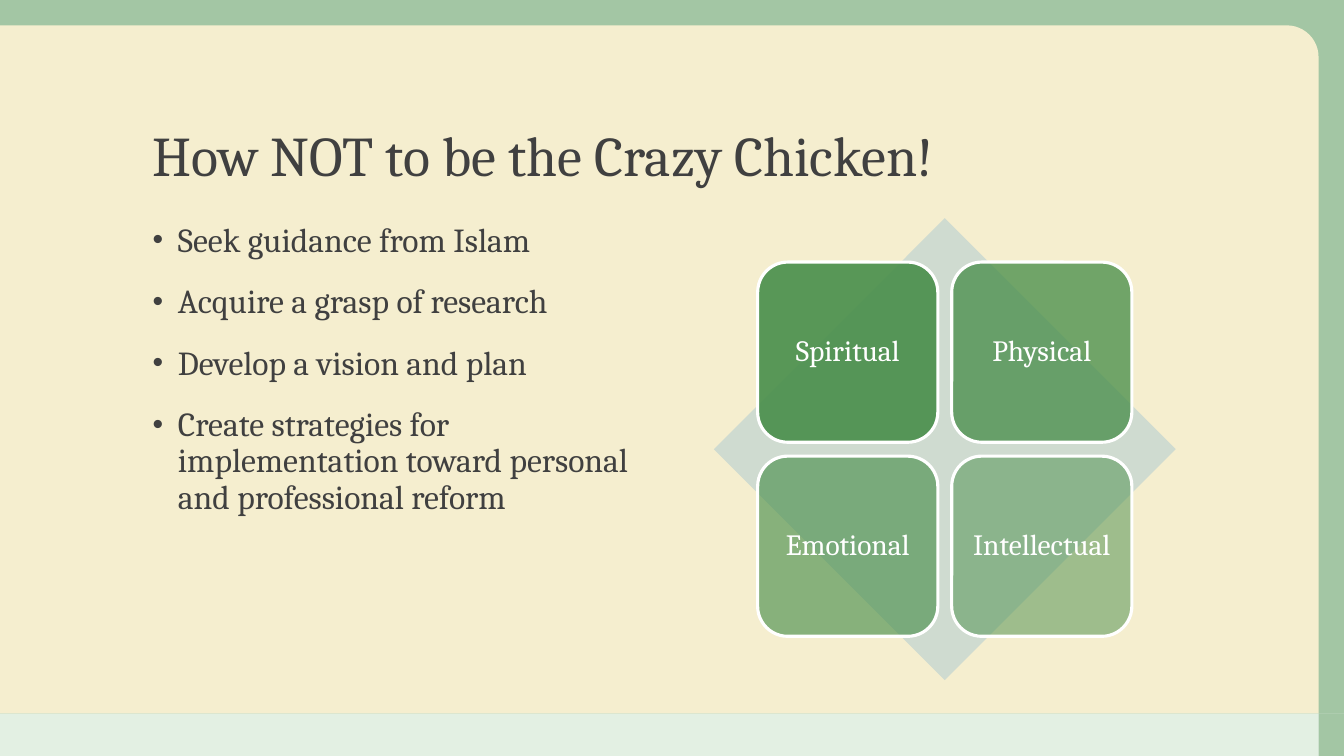
from dataclasses import dataclass

from lxml.etree import SubElement
from pptx import Presentation
from pptx.dml.color import RGBColor
from pptx.enum.shapes import MSO_SHAPE as Preset
from pptx.enum.text import MSO_ANCHOR as Anchor, PP_ALIGN as Align
from pptx.oxml.ns import qn
from pptx.util import Cm, Pt

SLIDE_WIDTH, SLIDE_HEIGHT = 33.87, 19.05


@dataclass(frozen=True)
class Theme:
    font: str = "Cambria"
    text: str = "404040"
    white: str = "FFFFFF"
    green: str = "488E4A"
    cream: str = "F5EECF"
    mint: str = "D8EBD8"
    diamond: str = "CFDBD0"
    title_size: float = 40
    body_size: float = 24
    tile_size: float = 21
    tile_line: float = 2.25


def write(frame, lines, *, font, size, color, align=Align.LEFT, anchor=Anchor.TOP,
          gap=0, bullet=None, inset=None):
    """Fill a text frame, one paragraph a line; gap is the space between them in points."""
    frame.word_wrap = True
    frame.vertical_anchor = anchor
    if inset is not None:
        frame.margin_left = frame.margin_right = Cm(inset)
        frame.margin_top = frame.margin_bottom = Cm(inset)
    for index, line in enumerate(lines):
        paragraph = frame.add_paragraph() if index else frame.paragraphs[0]
        if bullet:
            properties = paragraph._p.get_or_add_pPr()
            properties.set("marL", str(Cm(0.635)))
            properties.set("indent", str(Cm(-0.635)))
            SubElement(properties, qn("a:buSzPct"), val="90000")
            SubElement(properties, qn("a:buFont"), typeface="Arial")
            SubElement(properties, qn("a:buChar"), char=bullet)
        paragraph.alignment = align
        paragraph.line_spacing = 0.9
        if index:
            paragraph.space_before = Pt(gap)
        run = paragraph.add_run()
        run.text = line
        run.font.name = font
        run.font.size = Pt(size)
        run.font.color.rgb = RGBColor.from_string(color)


class SlideBuilder:
    def __init__(self, slide, theme):
        self.slide = slide
        self.theme = theme

    def shape(self, preset, left, top, width, height, color, opacity=100, line=None):
        shape = self.slide.shapes.add_shape(
            preset, Cm(left), Cm(top), Cm(width), Cm(height))
        shape.shadow.inherit = False
        shape.fill.solid()
        shape.fill.fore_color.rgb = RGBColor.from_string(color)
        if opacity < 100:
            fill_color = shape._element.spPr.find(qn("a:solidFill"))[0]
            SubElement(fill_color, qn("a:alpha"), val=str(opacity * 1000))
        if line:
            shape.line.color.rgb = RGBColor.from_string(line)
            shape.line.width = Pt(self.theme.tile_line)
        else:
            shape.line.fill.background()
        return shape

    def text(self, left, top, width, height, lines, **style):
        box = self.slide.shapes.add_textbox(Cm(left), Cm(top), Cm(width), Cm(height))
        write(box.text_frame, lines, font=self.theme.font, color=self.theme.text, **style)

    def background(self):
        theme = self.theme
        border, panel_bottom = 0.64, 17.98
        panel_width = SLIDE_WIDTH - border
        footer_height = SLIDE_HEIGHT - panel_bottom
        self.shape(Preset.RECTANGLE, 0, panel_bottom, panel_width, footer_height,
                   theme.mint, opacity=70)
        self.shape(Preset.RECTANGLE, panel_width, panel_bottom, border, footer_height,
                   theme.green, opacity=50)
        self.shape(Preset.RECTANGLE, 0, 0, SLIDE_WIDTH, panel_bottom,
                   theme.green, opacity=50)
        panel = self.shape(Preset.ROUND_1_RECTANGLE, 0, border, panel_width,
                           panel_bottom - border, theme.cream)
        panel.adjustments[0] = 0.046

    def matrix(self, left, top, size, tiles):
        """Draw a diamond with a two-by-two grid of labelled tiles centred on it."""
        theme = self.theme
        self.shape(Preset.DIAMOND, left, top, size, size, theme.diamond)
        tile, gap = 4.54, 0.35
        margin = (size - 2 * tile - gap) / 2
        for index, (label, opacity) in enumerate(tiles):
            row, column = divmod(index, 2)
            shape = self.shape(
                Preset.ROUNDED_RECTANGLE,
                left + margin + column * (tile + gap),
                top + margin + row * (tile + gap),
                tile, tile, theme.green, opacity=opacity, line=theme.white)
            write(shape.text_frame, [label], font=theme.font, size=theme.tile_size,
                  color=theme.white, align=Align.CENTER, anchor=Anchor.MIDDLE, inset=0.22)


def main():
    presentation = Presentation()
    presentation.slide_width = Cm(SLIDE_WIDTH)
    presentation.slide_height = Cm(SLIDE_HEIGHT)
    theme = Theme()
    builder = SlideBuilder(
        presentation.slides.add_slide(presentation.slide_layouts[6]), theme)

    builder.background()
    builder.text(3.6, 1.59, 26.67, 3.3, ["How NOT to be the Crazy Chicken!"],
                 size=theme.title_size, anchor=Anchor.BOTTOM)
    builder.text(3.6, 5.5, 12.91, 11.64, [
        "Seek guidance from Islam",
        "Acquire a grasp of research",
        "Develop a vision and plan",
        "Create strategies for implementation toward personal and professional reform",
    ], size=theme.body_size, gap=18, bullet="•")
    builder.matrix(17.99, 5.5, 11.64, [
        ("Spiritual", 90), ("Physical", 77), ("Emotional", 63), ("Intellectual", 50)])

    presentation.save("out.pptx")


if __name__ == "__main__":
    main()
